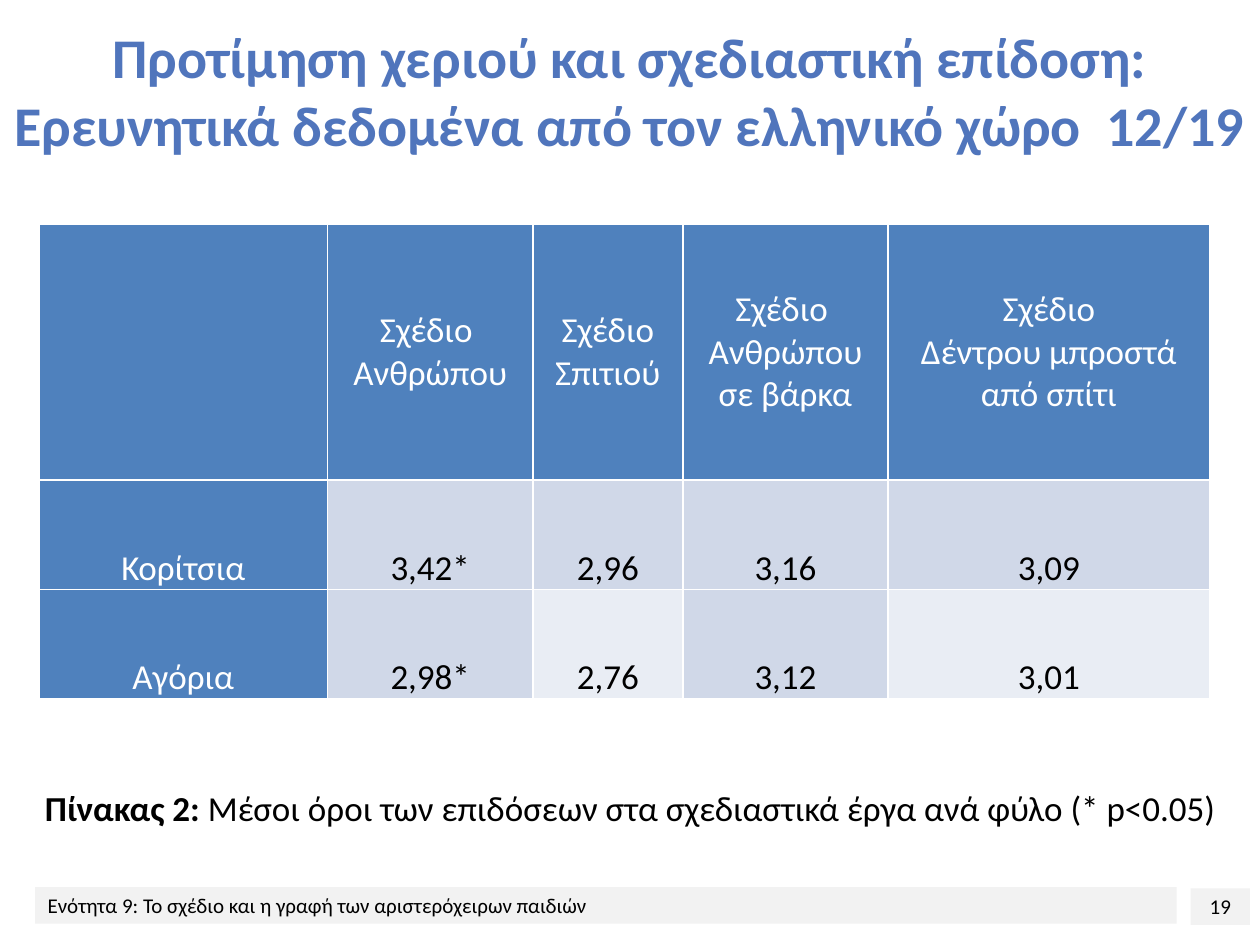
from lxml.etree import SubElement
from pptx import Presentation
from pptx.dml.color import RGBColor
from pptx.enum.shapes import MSO_SHAPE as SHAPE
from pptx.enum.text import MSO_ANCHOR as ANCHOR, PP_ALIGN as ALIGN
from pptx.oxml.ns import qn
from pptx.util import Inches, Pt

WHITE = RGBColor(0xFF, 0xFF, 0xFF)
BLACK = RGBColor(0, 0, 0)
TITLE_BLUE = RGBColor(0x50, 0x75, 0xBC)
HEADER_BLUE = RGBColor(0x4F, 0x81, 0xBD)
BAND_DARK = RGBColor(0xD0, 0xD8, 0xE8)
BAND_LIGHT = RGBColor(0xE9, 0xED, 0xF4)
BAR_GREY = RGBColor(0xF2, 0xF2, 0xF2)


class SlideBuilder:
    font = "Calibri"

    def __init__(self, prs):
        self.s = prs.slides.add_slide(prs.slide_layouts[6])

    def fill_text(self, tf, lines, size=20, color=BLACK, align=ALIGN.CENTER, spacing=None):
        """Each line is a paragraph: a list of (text, bold) runs."""
        for i, runs in enumerate(lines):
            p = tf.paragraphs[0] if i == 0 else tf.add_paragraph()
            p.alignment = align
            p.line_spacing = spacing
            for text, bold in runs:
                for j, part in enumerate(text.split("\n")):
                    if j:
                        p.add_line_break()
                    r = p.add_run()
                    r.text = part
                    style = {"name": self.font, "size": Pt(size), "bold": bold}
                    for key, value in style.items():
                        setattr(r.font, key, value)
                    r.font.color.rgb = color

    def text(self, box, runs, anchor=ANCHOR.TOP, **style):
        tf = self.s.shapes.add_textbox(*map(Inches, box)).text_frame
        tf.word_wrap = True
        tf.vertical_anchor = anchor
        self.fill_text(tf, [runs], **style)

    def bar(self, box, text, align):
        sp = self.s.shapes.add_shape(SHAPE.RECTANGLE, *map(Inches, box))
        sp.shadow.inherit = False
        sp.fill.solid()
        sp.fill.fore_color.rgb = BAR_GREY
        sp.line.fill.background()
        sp.text_frame.vertical_anchor = ANCHOR.MIDDLE
        self.fill_text(sp.text_frame, [[(text, False)]], size=12, align=align)

    def borders(self, cell):
        tc_pr = cell._tc.get_or_add_tcPr()
        for side in ("a:lnL", "a:lnR", "a:lnT", "a:lnB"):
            ln = SubElement(tc_pr, qn(side), w=str(Pt(1)))
            fill = SubElement(ln, qn("a:solidFill"))
            SubElement(fill, qn("a:srgbClr"), val=str(WHITE))

    def table(self, box, widths, heights, rows):
        shape = self.s.shapes.add_table(len(rows), len(widths), *map(Inches, box))
        table = shape.table
        for col, width in zip(table.columns, widths):
            col.width = Inches(width)
        for row, height in zip(table.rows, heights):
            row.height = Inches(height)
        for i, row in enumerate(rows):
            for j, text in enumerate(row):
                self.cell(table.cell(i, j), text, i, j)

    def cell(self, cell, text, i, j):
        heading = i == 0 or j == 0
        light = i == 2 and j % 2 == 0
        layout = {
            "margin_left": Inches(0.07), "margin_right": Inches(0.07),
            "margin_top": 0, "margin_bottom": 0,
            "vertical_anchor": ANCHOR.BOTTOM if i else ANCHOR.MIDDLE,
        }
        for key, value in layout.items():
            setattr(cell, key, value)
        self.borders(cell)
        cell.fill.solid()
        cell.fill.fore_color.rgb = HEADER_BLUE if heading else BAND_LIGHT if light else BAND_DARK
        if text:
            self.fill_text(cell.text_frame, [[(line, False)] for line in text.split("\n")],
                           color=WHITE if heading else BLACK, spacing=2.0 if i else None)


def main():
    prs = Presentation()
    prs.slide_width, prs.slide_height = Inches(10), Inches(7.5)
    slide = SlideBuilder(prs)

    # Footer
    slide.bar((9.45, 7.05, 0.47, 0.29), "19", ALIGN.CENTER)
    slide.bar((0.28, 7.04, 9.06, 0.29),
              "Ενότητα 9: Το σχέδιο και η γραφή των αριστερόχειρων παιδιών", ALIGN.LEFT)

    # Title
    slide.text((0, 0.13, 10, 1.17),
               [("Προτίμηση χεριού και σχεδιαστική επίδοση:\n"
                 "Ερευνητικά δεδομένα από τον ελληνικό χώρο  12/19", True)],
               anchor=ANCHOR.MIDDLE, size=32, color=TITLE_BLUE)

    # Caption
    slide.text((0.24, 6.19, 9.53, 0.44),
               [("Πίνακας 2:", True),
                (" Μέσοι όροι των επιδόσεων στα σχεδιαστικά έργα ανά φύλο (* p<0.05)", False)])

    # Mean scores by sex
    slide.table((0.31, 1.78, 9.29, 3.77), (2.29, 1.63, 1.19, 1.63, 2.55), (2.03, 0.87, 0.87), [
        ("", "Σχέδιο  Ανθρώπου", "Σχέδιο\nΣπιτιού", "Σχέδιο  Ανθρώπου σε βάρκα",
         "Σχέδιο\nΔέντρου μπροστά από σπίτι"),
        ("Κορίτσια", "3,42*", "2,96", "3,16", "3,09"),
        ("Αγόρια", "2,98*", "2,76", "3,12", "3,01"),
    ])

    prs.save("out.pptx")


if __name__ == "__main__":
    main()
